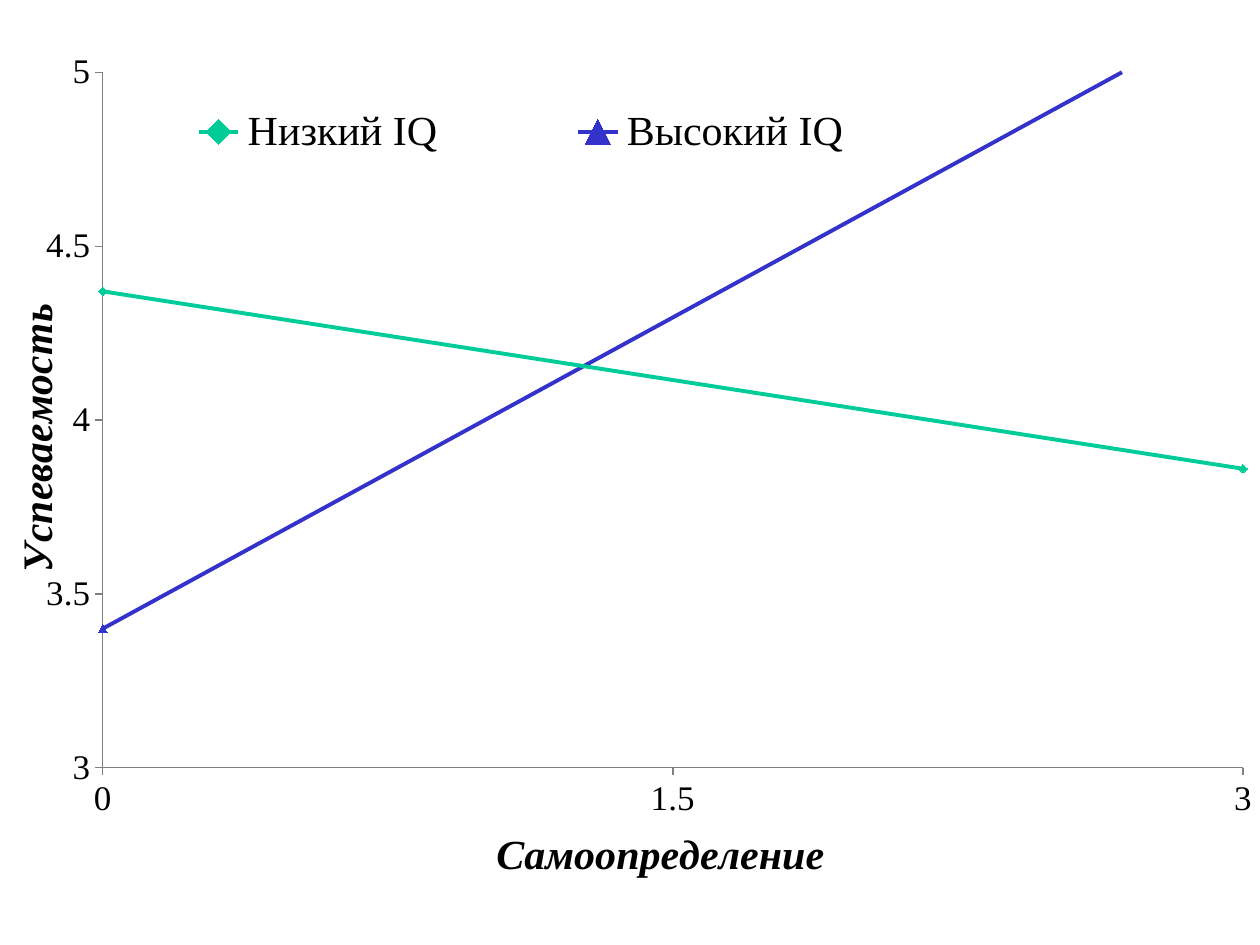
"""Line chart of school performance against self-determination at two IQ levels."""
from lxml import etree
from pptx import Presentation
from pptx.chart.data import XyChartData
from pptx.dml.color import RGBColor
from pptx.enum.chart import XL_CHART_TYPE as CT, XL_LEGEND_POSITION as LP
from pptx.enum.chart import XL_MARKER_STYLE as MS, XL_TICK_MARK as TM
from pptx.oxml.ns import qn
from pptx.util import Inches, Pt

BLACK = RGBColor(0x00, 0x00, 0x00)
GREY = RGBColor(0x80, 0x80, 0x80)
GREEN = RGBColor(0x00, 0xCC, 0x99)
BLUE = RGBColor(0x33, 0x33, 0xCC)
FONT = "Times New Roman"


def set_font(font, size):
    font.name, font.size, font.color.rgb = FONT, Pt(size), BLACK


def set_layout(parent, index, **parts):
    for old in parent.findall(qn("c:layout")):
        parent.remove(old)
    layout = etree.Element(qn("c:layout"))
    manual = etree.SubElement(layout, qn("c:manualLayout"))
    for tag, val in parts.items():
        etree.SubElement(manual, qn(f"c:{tag}")).set("val", str(val))
    parent.insert(index, layout)


prs = Presentation()
prs.slide_width, prs.slide_height = Inches(10), Inches(7.5)
W, H = prs.slide_width, prs.slide_height
s = prs.slides.add_slide(prs.slide_layouts[6])

data = XyChartData()
for name, values in (("Низкий IQ", (4.37, 3.86)), ("Высокий IQ", (3.4, 5.19))):
    series = data.add_series(name)
    for x, y in zip((0, 3), values):
        series.add_data_point(x, y)

box = int(-0.009 * W), int(0.056 * H), int(1.018 * W), int(0.887 * H)
chart = s.shapes.add_chart(CT.XY_SCATTER_LINES, *box, data).chart
chart.has_title = False
set_font(chart.font, 10)
plot = chart.plots[0]
plot.vary_by_categories = False
set_layout(chart._chartSpace.chart.plotArea, 0, layoutTarget="inner", xMode="edge",
           yMode="edge", x=0.089, y=0.023, w=0.889, h=0.844)

for series, color, style in zip(plot.series, (GREEN, BLUE), (MS.DIAMOND, MS.TRIANGLE)):
    series.smooth = False
    series.format.line.width = Pt(2.25)
    series.format.line.color.rgb = color
    series.marker.style, series.marker.size = style, 5
    series.marker.format.fill.solid()
    series.marker.format.fill.fore_color.rgb = color
    series.marker.format.line.color.rgb = color

for axis, title, low, high, step, x, y in (
    (chart.category_axis, "Самоопределение", 0, 3, 1.5, 0.39, 0.93),
    (chart.value_axis, "Успеваемость", 3, 5, 0.5, 0.01, 0.3),
):
    axis.minimum_scale, axis.maximum_scale, axis.major_unit = low, high, step
    axis.has_major_gridlines = False
    axis.major_tick_mark, axis.minor_tick_mark = TM.OUTSIDE, TM.NONE
    axis.format.line.color.rgb = GREY
    axis.format.line.width = Pt(0.75)
    set_font(axis.tick_labels.font, 20)
    axis.tick_labels.number_format = "General"
    axis.tick_labels.number_format_is_linked = False
    r = axis.axis_title.text_frame.paragraphs[0].add_run()
    r.text = title
    set_font(r.font, 24)
    r.font.bold = r.font.italic = True
    set_layout(axis.axis_title._element, 1, xMode="edge", yMode="edge", x=x, y=y)

chart.has_legend = True
legend = chart.legend
legend.position = LP.RIGHT
legend.include_in_layout = False
set_font(legend.font, 24)
set_layout(legend._element, 1, xMode="edge", yMode="edge", x=0.065, y=0.055, w=0.7, h=0.08)

prs.save("out.pptx")
